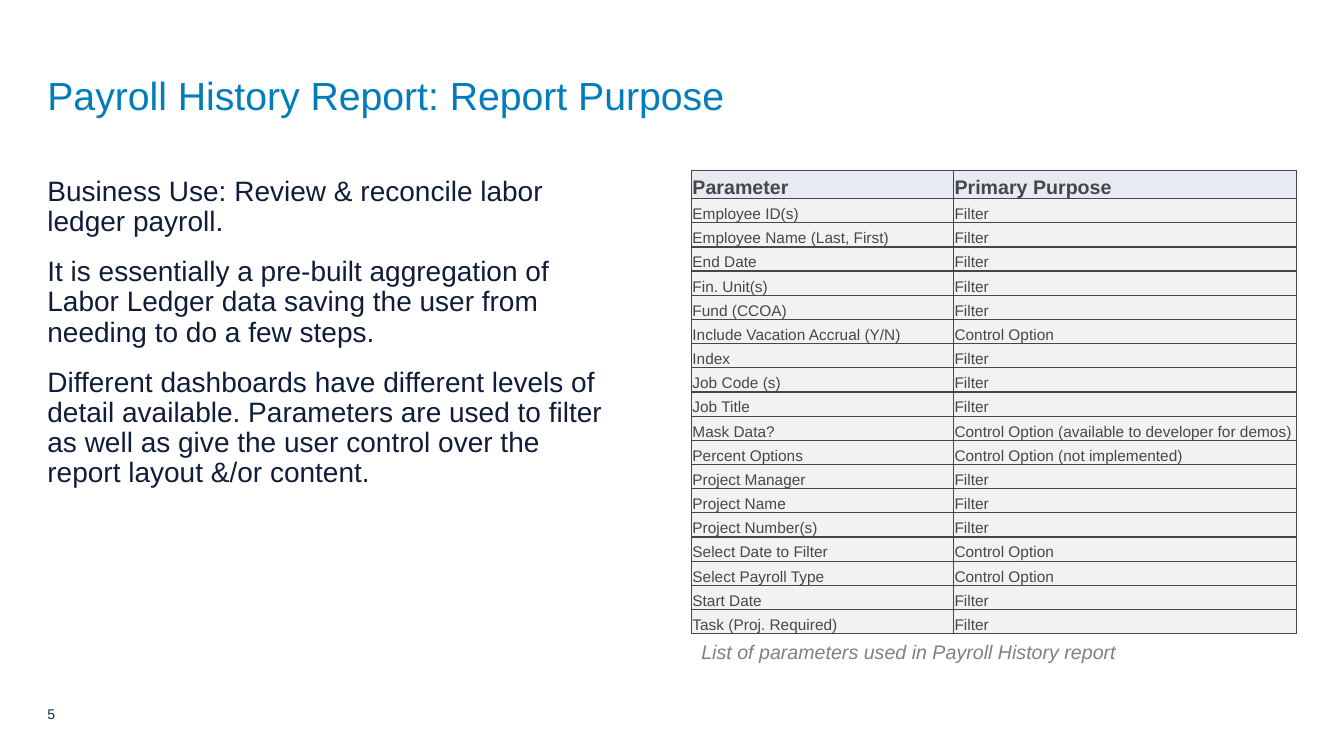
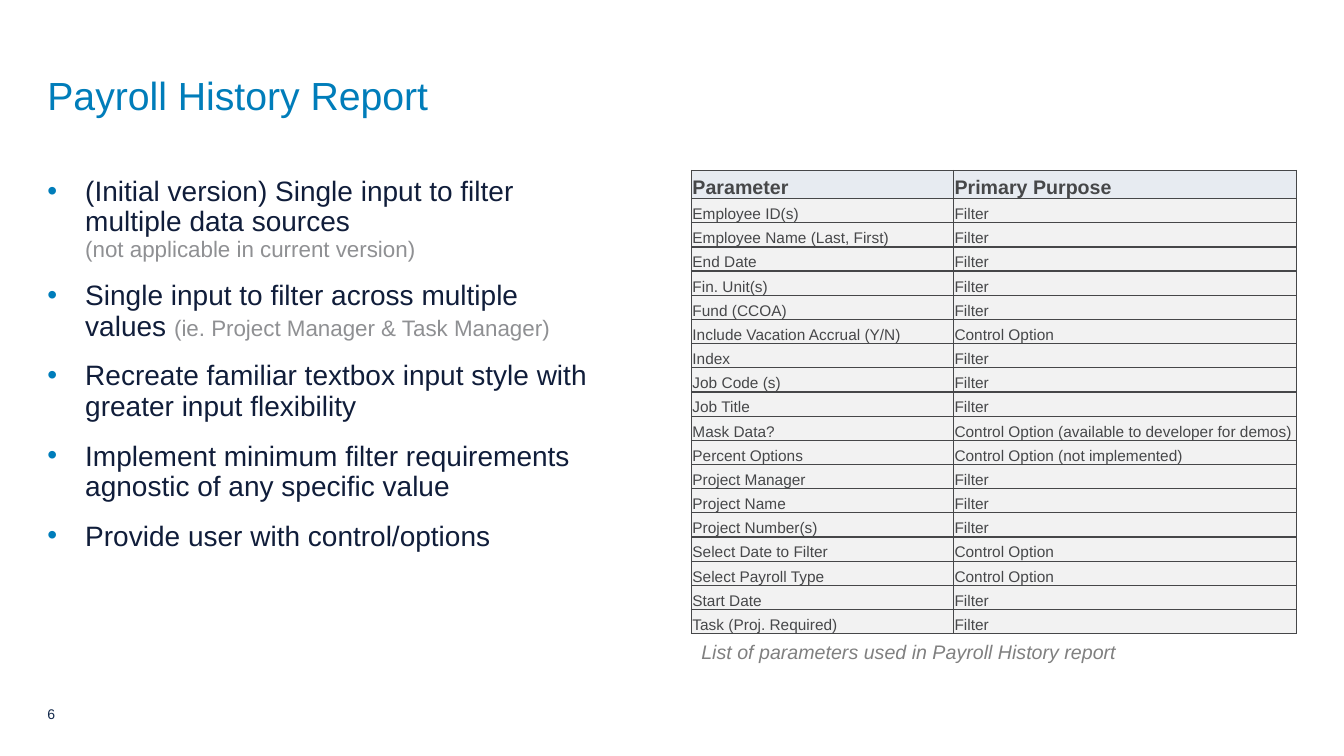
from dataclasses import dataclass

from lxml import etree
from pptx import Presentation, util as u
from pptx.dml import color
from pptx.enum import text
from pptx.oxml import ns


@dataclass(frozen=True)
class Theme:
    font: str = "Arial"
    accent: str = "007DBA"
    body: str = "101D3A"
    aside: str = "8F9093"
    number: str = "13294B"
    caption: str = "808080"
    table_text: str = "464749"
    header_fill: str = "E7EBF1"
    row_fill: str = "F2F2F2"
    title_size: int = 28
    body_size: int = 20
    aside_size: int = 16
    header_size: int = 14
    row_size: int = 11
    caption_size: int = 14
    number_size: int = 10


class Deck:
    left = 33.84
    table_left = 493.92
    table_top = 121.68
    header_height = 20.16
    row_height = 17.28
    column_widths = (187.2, 244.8)
    bullet_indent = 27

    def __init__(self, theme):
        self.theme = theme
        self.presentation = Presentation()
        self.presentation.slide_width = u.Pt(960)
        self.presentation.slide_height = u.Pt(540)
        self.slide = None

    def start_slide(self, heading, number):
        layout = self.presentation.slide_layouts[1]
        self.slide = self.presentation.slides.add_slide(layout)
        self.title(heading)
        self.page_number(number)

    def place(self, box, left, top, width, height):
        box.left, box.top = u.Pt(left), u.Pt(top)
        box.width, box.height = u.Pt(width), u.Pt(height)

    def frame(self, box, anchor, right_inset=0):
        frame = box.text_frame
        frame.word_wrap = True
        frame.auto_size = text.MSO_AUTO_SIZE.NONE
        frame.vertical_anchor = anchor
        frame.margin_left = frame.margin_top = frame.margin_bottom = 0
        frame.margin_right = u.Pt(right_inset)
        return frame

    def style(self, run, size, rgb, bold=False, italic=False):
        font = run.font
        font.name, font.size = self.theme.font, u.Pt(size)
        font.bold, font.italic = bold, italic
        font.color.rgb = color.RGBColor.from_string(rgb)

    def title(self, heading):
        box = self.slide.shapes.title
        self.place(box, self.left, 12.24, 895.68, 72)
        frame = self.frame(box, text.MSO_ANCHOR.BOTTOM, 7.2)
        frame.text = heading
        paragraph = frame.paragraphs[0]
        paragraph.alignment = text.PP_ALIGN.LEFT
        paragraph.line_spacing = u.Pt(30)
        self.style(paragraph.runs[0], self.theme.title_size, self.theme.accent)

    def page_number(self, number):
        box = self.slide.shapes.add_textbox(0, 0, 0, 0)
        self.place(box, self.left, 495.36, 25.2, 28.8)
        frame = self.frame(box, text.MSO_ANCHOR.MIDDLE)
        frame.text = str(number)
        self.style(frame.paragraphs[0].runs[0], self.theme.number_size, self.theme.number)

    def body(self, points, bulleted=False):
        box = self.slide.placeholders[1]
        self.place(box, self.left, 126.72, 397.44, 317.52)
        frame = self.frame(box, text.MSO_ANCHOR.TOP)
        for index, (statement, aside) in enumerate(points):
            paragraph = frame.add_paragraph() if index else frame.paragraphs[0]
            paragraph.text = statement
            paragraph.line_spacing = 0.9
            paragraph.space_before, paragraph.space_after = u.Pt(6), u.Pt(8)
            for run in paragraph.runs:
                self.style(run, self.theme.body_size, self.theme.body)
            for line_break in paragraph._p.findall(ns.qn("a:br")):
                etree.SubElement(line_break, ns.qn("a:rPr"), sz=str(self.theme.body_size * 100))
            if aside:
                remark = paragraph.add_run()
                remark.text = aside
                self.style(remark, self.theme.aside_size, self.theme.aside)
            self.bullet(paragraph, bulleted)

    def bullet(self, paragraph, bulleted):
        properties = paragraph._p.get_or_add_pPr()
        indent = u.Pt(self.bullet_indent) if bulleted else 0
        properties.set("marL", str(indent))
        properties.set("indent", str(-indent))
        if not bulleted:
            etree.SubElement(properties, ns.qn("a:buNone"))
            return
        tint = etree.SubElement(properties, ns.qn("a:buClr"))
        etree.SubElement(tint, ns.qn("a:srgbClr"), val=self.theme.accent)
        etree.SubElement(properties, ns.qn("a:buFont"), typeface=self.theme.font)
        etree.SubElement(properties, ns.qn("a:buChar"), char="•")

    def table(self, header, rows):
        records = [header, *rows]
        height = self.header_height + self.row_height * len(rows)
        grid = self.slide.shapes.add_table(
            len(records), len(header), u.Pt(self.table_left), u.Pt(self.table_top),
            u.Pt(sum(self.column_widths)), u.Pt(height)).table
        grid.first_row = grid.horz_banding = False
        for column, width in zip(grid.columns, self.column_widths):
            column.width = u.Pt(width)
        for index, record in enumerate(records):
            grid.rows[index].height = u.Pt(self.row_height if index else self.header_height)
            for position, entry in enumerate(record):
                self.cell(grid.cell(index, position), entry, is_header=index == 0)

    def cell(self, cell, entry, is_header):
        theme = self.theme
        cell.text_frame.text = entry
        cell.vertical_anchor = text.MSO_ANCHOR.BOTTOM
        cell.margin_left = cell.margin_top = cell.margin_right = u.Pt(0.72)
        cell.margin_bottom = 0
        cell.fill.solid()
        fill = theme.header_fill if is_header else theme.row_fill
        cell.fill.fore_color.rgb = color.RGBColor.from_string(fill)
        size = theme.header_size if is_header else theme.row_size
        self.style(cell.text_frame.paragraphs[0].runs[0], size, theme.table_text, bold=is_header)
        properties = cell._tc.get_or_add_tcPr()
        for order, side in enumerate(("lnL", "lnR", "lnT", "lnB")):
            border = etree.Element(ns.qn(f"a:{side}"), w=str(u.Pt(1)))
            ink = etree.SubElement(border, ns.qn("a:solidFill"))
            etree.SubElement(ink, ns.qn("a:srgbClr"), val=theme.table_text)
            properties.insert(order, border)

    def caption(self, wording):
        box = self.slide.shapes.add_textbox(0, 0, 0, 0)
        self.place(box, self.table_left, 453.6, 414.72, 24.48)
        frame = box.text_frame
        frame.word_wrap = True
        frame.auto_size = text.MSO_AUTO_SIZE.SHAPE_TO_FIT_TEXT
        frame.text = wording
        self.style(frame.paragraphs[0].runs[0], self.theme.caption_size,
                   self.theme.caption, italic=True)


FILTER = "Filter"
CONTROL = "Control Option"
HEADER = ("Parameter", "Primary Purpose")
PARAMETERS = [
    ("Employee ID(s)", FILTER),
    ("Employee Name (Last, First)", FILTER),
    ("End Date", FILTER),
    ("Fin. Unit(s)", FILTER),
    ("Fund (CCOA)", FILTER),
    ("Include Vacation Accrual (Y/N)", CONTROL),
    ("Index", FILTER),
    ("Job Code (s)", FILTER),
    ("Job Title", FILTER),
    ("Mask Data?", f"{CONTROL} (available to developer for demos)"),
    ("Percent Options", f"{CONTROL} (not implemented)"),
    ("Project Manager", FILTER),
    ("Project Name", FILTER),
    ("Project Number(s)", FILTER),
    ("Select Date to Filter", CONTROL),
    ("Select Payroll Type", CONTROL),
    ("Start Date", FILTER),
    ("Task (Proj. Required)", FILTER),
]
PURPOSE = [
    ("Business Use: Review & reconcile labor ledger payroll.", ""),
    ("It is essentially a pre-built aggregation of Labor Ledger data saving the user "
     "from needing to do a few steps.", ""),
    ("Different dashboards have different levels of detail available. Parameters are used "
     "to filter as well as give the user control over the report layout &/or content.", ""),
]
GOALS = [
    ("(Initial version) Single input to filter multiple data sources\n",
     "(not applicable in current version)"),
    ("Single input to filter across multiple values ", "(ie. Project Manager & Task Manager)"),
    ("Recreate familiar textbox input style with greater input flexibility", ""),
    ("Implement minimum filter requirements agnostic of any specific value", ""),
    ("Provide user with control/options", ""),
]
SLIDES = [
    ("Payroll History Report: Report Purpose", PURPOSE, False),
    ("Payroll History Report", GOALS, True),
]


def main():
    deck = Deck(Theme())
    for number, (heading, points, bulleted) in enumerate(SLIDES, start=5):
        deck.start_slide(heading, number)
        deck.body(points, bulleted)
        deck.table(HEADER, PARAMETERS)
        deck.caption("List of parameters used in Payroll History report")
    deck.presentation.save("out.pptx")


if __name__ == "__main__":
    main()
